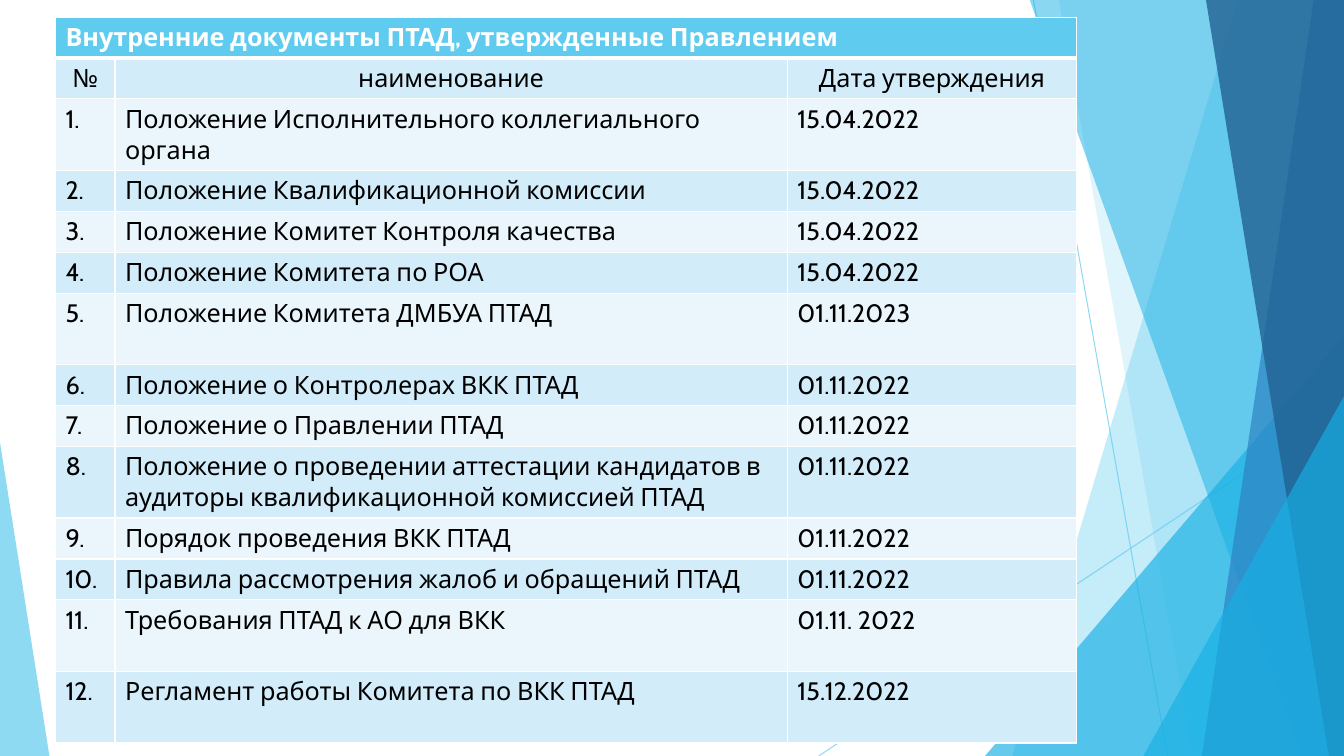
from dataclasses import dataclass

from lxml import etree
from pptx import Presentation
from pptx.dml.color import RGBColor
from pptx.enum.shapes import MSO_CONNECTOR, MSO_SHAPE
from pptx.enum.text import PP_ALIGN
from pptx.oxml.ns import qn
from pptx.util import Emu, Pt

LEFT, CENTER = PP_ALIGN.LEFT, PP_ALIGN.CENTER
STRAIGHT = MSO_CONNECTOR.STRAIGHT
TRIANGLE = MSO_SHAPE.ISOSCELES_TRIANGLE
PX = 9144
SLIDE_WIDTH, SLIDE_HEIGHT = 1333, 750


@dataclass(frozen=True)
class Theme:
    """Colours and type sizes of the slide."""

    sky: str = "5FCBEF"
    cyan: str = "17B0E4"
    blue: str = "2E83C3"
    navy: str = "226292"
    white: str = "FFFFFF"
    black: str = "000000"
    dark_band: str = "D2ECF9"
    light_band: str = "EAF6FC"
    font: str = "Cabin"
    text_size: int = 18
    ray_width: float = 0.75
    border_width: int = 1
    title_border_width: int = 3


THEME = Theme()

RAYS = [((1025, 0), (1158, 750)), ((1333, 403), (812, 750))]
RIGHT_FACETS = [
    ("band", 1228, 1004, THEME.sky, 36),
    ("band", 1050, 1183, THEME.sky, 20),
    ("triangle", 977, 333, THEME.cyan, 66),
    ("band", 1021, 1291, THEME.cyan, 50),
    ("band", 1303, 1192, THEME.blue, 70),
    ("band", 1196, 1318, THEME.navy, 80),
    ("triangle", 1134, 393, THEME.cyan, 66),
]

TABLE_LEFT, TABLE_TOP = 55, 17
COLUMN_WIDTHS = [59, 667, 287]
ROW_HEIGHT, TALL_ROW_HEIGHT = 40, 71
TALL_DOCUMENTS = {1, 5, 8, 11, 12}
TITLE = "Внутренние документы ПТАД, утвержденные Правлением"
HEADINGS = ["№", "наименование", "Дата утверждения"]
DOCUMENTS = [
    ("Положение Исполнительного коллегиального органа", "15.04.2022"),
    ("Положение Квалификационной комиссии", "15.04.2022"),
    ("Положение Комитет Контроля качества", "15.04.2022"),
    ("Положение Комитета по РОА", "15.04.2022"),
    ("Положение Комитета ДМБУА ПТАД", "01.11.2023"),
    ("Положение о Контролерах ВКК ПТАД", "01.11.2022"),
    ("Положение о Правлении ПТАД", "01.11.2022"),
    ("Положение о проведении аттестации кандидатов в аудиторы "
     "квалификационной комиссией ПТАД", "01.11.2022"),
    ("Порядок проведения ВКК ПТАД", "01.11.2022"),
    ("Правила рассмотрения жалоб и обращений ПТАД", "01.11.2022"),
    ("Требования ПТАД к АО для ВКК", "01.11. 2022"),
    ("Регламент работы Комитета по ВКК ПТАД", "15.12.2022"),
]


def px(length):
    """Turn slide pixels into EMU."""
    return Emu(length * PX)


def set_alpha(properties, percent):
    """Set the opacity of the colour found in the given properties."""
    color = next(properties.iter(qn("a:srgbClr")))
    etree.SubElement(color, qn("a:alpha"), val=str(percent * 1000))


def style_facet(shape, color, alpha):
    """Give a shape a translucent fill without line or shadow."""
    shape.shadow.inherit = False
    shape.fill.solid()
    shape.fill.fore_color.rgb = RGBColor.from_string(color)
    set_alpha(shape._element.spPr, alpha)
    shape.line.fill.background()


def add_ray(slide, start, end):
    """Draw one thin translucent line."""
    ray = slide.shapes.add_connector(STRAIGHT, *map(px, start + end))
    ray.line.color.rgb = RGBColor.from_string(THEME.sky)
    ray.line.width = Pt(THEME.ray_width)
    properties = ray._element.spPr
    set_alpha(properties, 70)
    etree.SubElement(properties, qn("a:effectLst"))


def add_band(slide, top_x, bottom_x, color, alpha):
    """Draw a full-height facet from a slanted edge to the right side."""
    builder = slide.shapes.build_freeform(top_x, -1, scale=PX)
    corners = [(SLIDE_WIDTH, -1), (SLIDE_WIDTH, SLIDE_HEIGHT), (bottom_x, SLIDE_HEIGHT)]
    builder.add_line_segments(corners, close=True)
    style_facet(builder.convert_to_shape(), color, alpha)


def add_triangle(slide, left, top, right, apex, color, alpha):
    """Draw a triangle standing on the bottom edge of the slide."""
    box = map(px, (left, top, right - left, SLIDE_HEIGHT - top))
    shape = slide.shapes.add_shape(TRIANGLE, *box)
    shape.adjustments[0] = apex
    style_facet(shape, color, alpha)


def add_backdrop(slide):
    """Draw the rays and facets behind the table."""
    for start, end in RAYS:
        add_ray(slide, start, end)
    for kind, first, second, color, alpha in RIGHT_FACETS:
        if kind == "band":
            add_band(slide, first, second, color, alpha)
        else:
            add_triangle(slide, first, second, SLIDE_WIDTH, 1, color, alpha)
    add_triangle(slide, 0, 439, 49, 0, THEME.sky, 70)


def set_borders(cell, top, bottom):
    """Draw white borders on the four sides of a cell."""
    properties = cell._tc.get_or_add_tcPr()
    side = THEME.border_width
    for name, width in (("lnL", side), ("lnR", side), ("lnT", top), ("lnB", bottom)):
        line = etree.SubElement(properties, qn(f"a:{name}"), w=str(Pt(width)))
        fill = etree.SubElement(line, qn("a:solidFill"))
        etree.SubElement(fill, qn("a:srgbClr"), val=THEME.white)


def style_cell(cell, row_index):
    """Format a cell according to its row: title, headings or document."""
    is_title = row_index == 0
    thin, thick = THEME.border_width, THEME.title_border_width
    set_borders(cell, thick if row_index == 1 else thin, thick if is_title else thin)
    band = THEME.dark_band if row_index % 2 else THEME.light_band
    cell.fill.solid()
    cell.fill.fore_color.rgb = RGBColor.from_string(THEME.sky if is_title else band)
    paragraph = cell.text_frame.paragraphs[0]
    paragraph.alignment = CENTER if row_index == 1 else LEFT
    for run in paragraph.runs:
        run.font.name = THEME.font
        run.font.size = Pt(THEME.text_size)
        run.font.bold = is_title
        run.font.color.rgb = RGBColor.from_string(THEME.white if is_title else THEME.black)


def add_documents_table(slide):
    """Add the table of approved documents."""
    numbered = [(f"{number}.", *entry) for number, entry in enumerate(DOCUMENTS, 1)]
    rows = [(TITLE, "", ""), HEADINGS, *numbered]
    heights = [TALL_ROW_HEIGHT if index - 1 in TALL_DOCUMENTS else ROW_HEIGHT
               for index in range(len(rows))]
    box = map(px, (TABLE_LEFT, TABLE_TOP, sum(COLUMN_WIDTHS), sum(heights)))
    table = slide.shapes.add_table(len(rows), len(COLUMN_WIDTHS), *box).table
    for column, width in zip(table.columns, COLUMN_WIDTHS):
        column.width = px(width)
    table.cell(0, 0).merge(table.cell(0, len(COLUMN_WIDTHS) - 1))
    for row_index, texts in enumerate(rows):
        table.rows[row_index].height = px(heights[row_index])
        for column_index, text in enumerate(texts):
            cell = table.cell(row_index, column_index)
            cell.text_frame.text = text
            style_cell(cell, row_index)


def main():
    """Build and save the presentation."""
    presentation = Presentation()
    presentation.slide_width = px(SLIDE_WIDTH)
    presentation.slide_height = px(SLIDE_HEIGHT)
    slide = presentation.slides.add_slide(presentation.slide_layouts[6])
    add_backdrop(slide)
    add_documents_table(slide)
    presentation.save("out.pptx")


if __name__ == "__main__":
    main()
